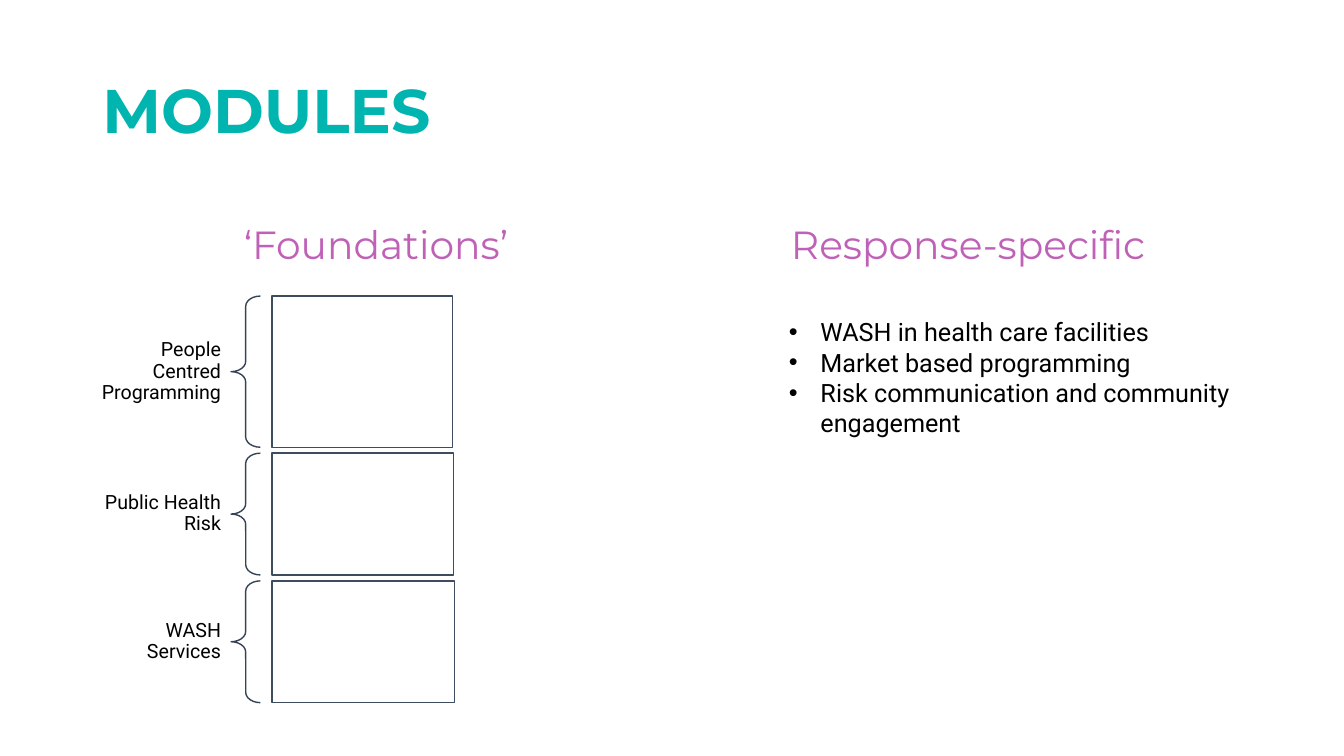
from dataclasses import dataclass

from lxml import etree
from pptx import Presentation
from pptx import util as u
from pptx.dml import color
from pptx.enum import shapes, text
from pptx.oxml import ns


@dataclass(frozen=True)
class Theme:
    title_color: str = "00B5AF"
    heading_color: str = "C061B8"
    body_color: str = "000000"
    brace_line: str = "364355"
    frame_line: str = "3E4C60"
    frame_fill: str = "FFFFFF"
    display_font: str = "Montserrat"
    body_font: str = "Roboto"
    title_size: float = 44
    heading_size: float = 28
    bullet_size: float = 18
    label_size: float = 14


THEME = Theme()
ALIGN = text.PP_ALIGN
ANCHOR = text.MSO_ANCHOR

MODULE_GROUPS = [
    ("People Centred Programming", 3, 108),
    ("Public Health Risk", 2, 87),
    ("WASH Services", 2, 87),
]
RESPONSE_MODULES = [
    "WASH in health care facilities",
    "Market based programming",
    "Risk communication and community engagement",
]


def points(*lengths):
    return [u.Pt(length) for length in lengths]


def add_text(page, place, lines, font, size, rgb, align=ALIGN.LEFT,
             anchor=ANCHOR.TOP, spacing=1.0, bold=False, bullet_indent=0):
    box = page.shapes.add_textbox(*points(*place))
    frame = box.text_frame
    frame.word_wrap = True
    frame.vertical_anchor = anchor
    for index, line in enumerate(lines):
        para = frame.paragraphs[0] if index == 0 else frame.add_paragraph()
        para.alignment = align
        para.line_spacing = spacing
        if bullet_indent:
            add_bullet(para, bullet_indent)
        span = para.add_run()
        span.text = line
        span.font.name = font
        span.font.size = u.Pt(size)
        span.font.bold = bold
        span.font.color.rgb = color.RGBColor.from_string(rgb)


def add_bullet(para, indent):
    properties = para._p.get_or_add_pPr()
    properties.set("marL", str(u.Pt(indent)))
    properties.set("indent", str(-u.Pt(indent)))
    etree.SubElement(properties, ns.qn("a:buFont")).set("typeface", "Arial")
    etree.SubElement(properties, ns.qn("a:buChar")).set("char", "•")


def add_outline(page, kind, place, line, fill=None):
    shape = page.shapes.add_shape(kind, *points(*place))
    shape.shadow.inherit = False
    if fill:
        shape.fill.solid()
        shape.fill.fore_color.rgb = color.RGBColor.from_string(fill)
    else:
        shape.fill.background()
    shape.line.color.rgb = color.RGBColor.from_string(line)
    shape.line.width = u.Pt(1)
    return shape


def add_heading(page, left, caption):
    add_text(page, (left, 157.5, 423, 65), [caption], THEME.display_font,
             THEME.heading_size, THEME.heading_color, ALIGN.CENTER, spacing=0.9)


def add_module_group(page, top, height, label, line_count, frame_width):
    label_height = 17 * line_count + 7
    label_top = top + (height - label_height) / 2
    add_text(page, (59, label_top, 106, label_height), [label], THEME.body_font,
             THEME.label_size, THEME.body_color, ALIGN.RIGHT, ANCHOR.MIDDLE, 0.9)
    brace = add_outline(page, shapes.MSO_SHAPE.LEFT_BRACE,
                        (165, top, 21, height), THEME.brace_line)
    brace.adjustments[0] = 0.35
    brace.adjustments[1] = 0.5
    add_outline(page, shapes.MSO_SHAPE.RECTANGLE,
                (194.4, top, frame_width, height),
                THEME.frame_line, THEME.frame_fill)


def main():
    deck = Presentation()
    deck.slide_width, deck.slide_height = points(960, 540)
    page = deck.slides.add_slide(deck.slide_layouts[6])

    add_text(page, (66, 29, 828, 104), ["MODULES"], THEME.display_font,
             THEME.title_size, THEME.title_color, anchor=ANCHOR.MIDDLE,
             spacing=0.9, bold=True)
    add_heading(page, 57, "‘Foundations’")
    add_heading(page, 480, "Response-specific")

    top = 211.5
    for index, (label, line_count, height) in enumerate(MODULE_GROUPS):
        add_module_group(page, top, height, label, line_count, 129 + 0.7 * index)
        top += height + 4.2

    add_text(page, (556.5, 222.5, 382, 94), RESPONSE_MODULES, THEME.body_font,
             THEME.bullet_size, THEME.body_color, anchor=ANCHOR.MIDDLE,
             bullet_indent=22.5)
    deck.save("out.pptx")


if __name__ == "__main__":
    main()
